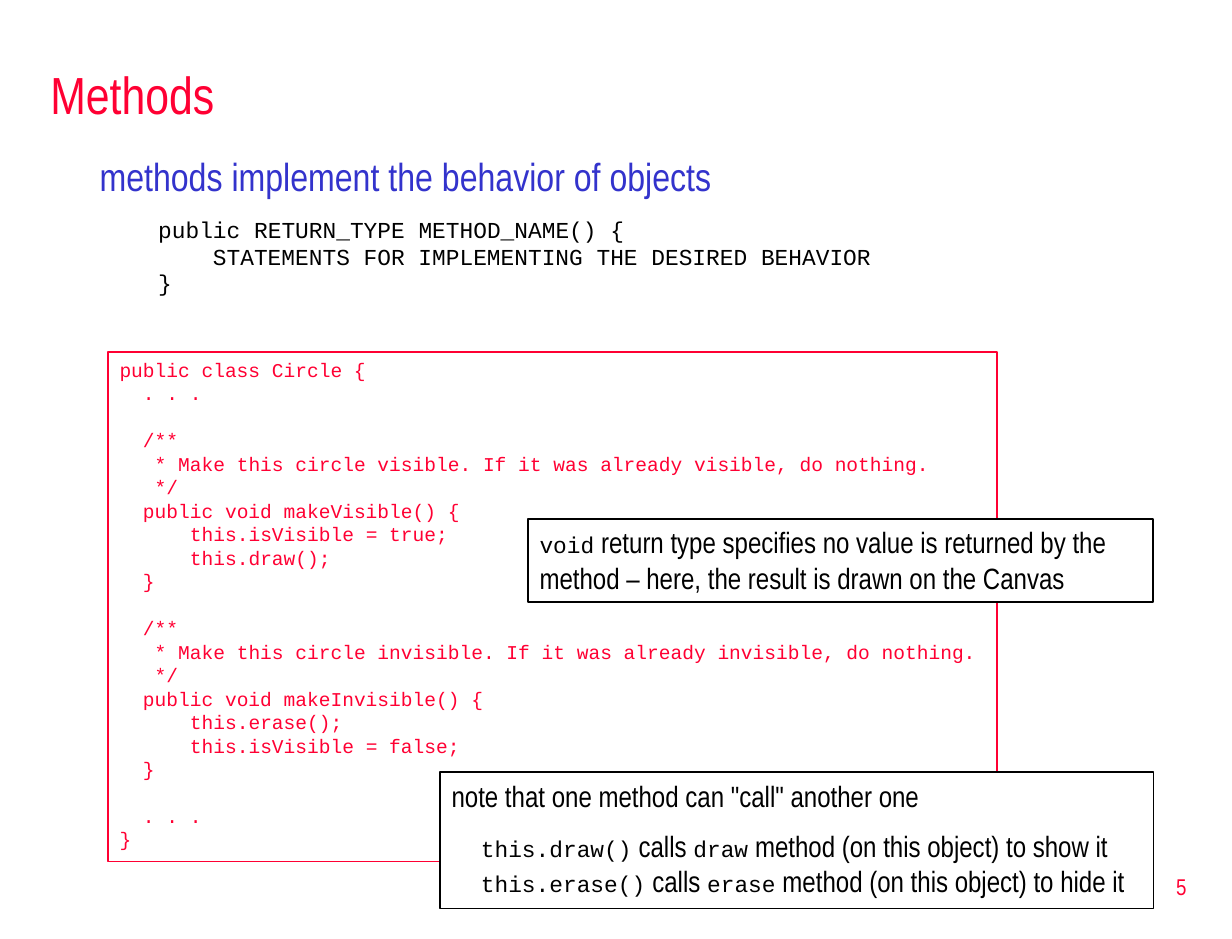
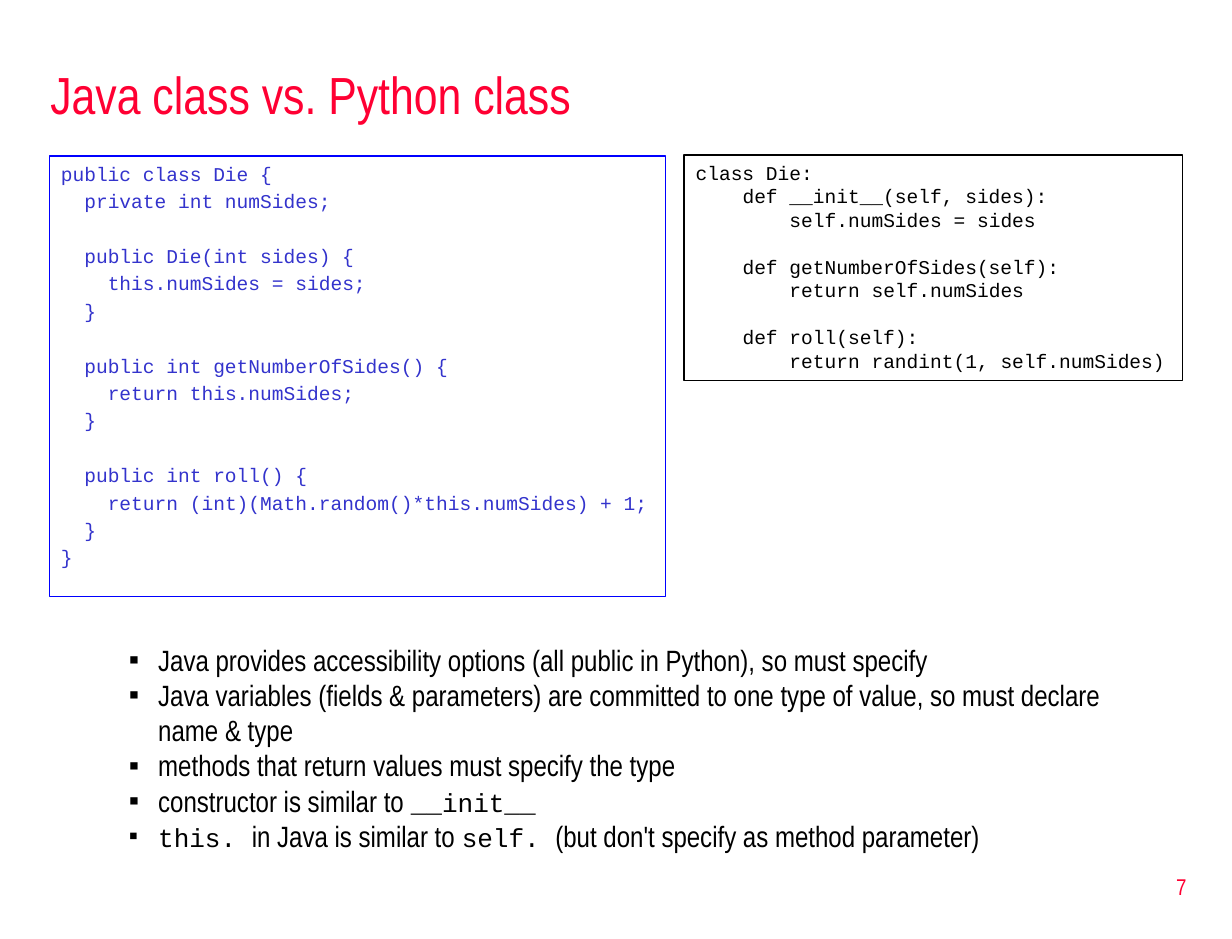
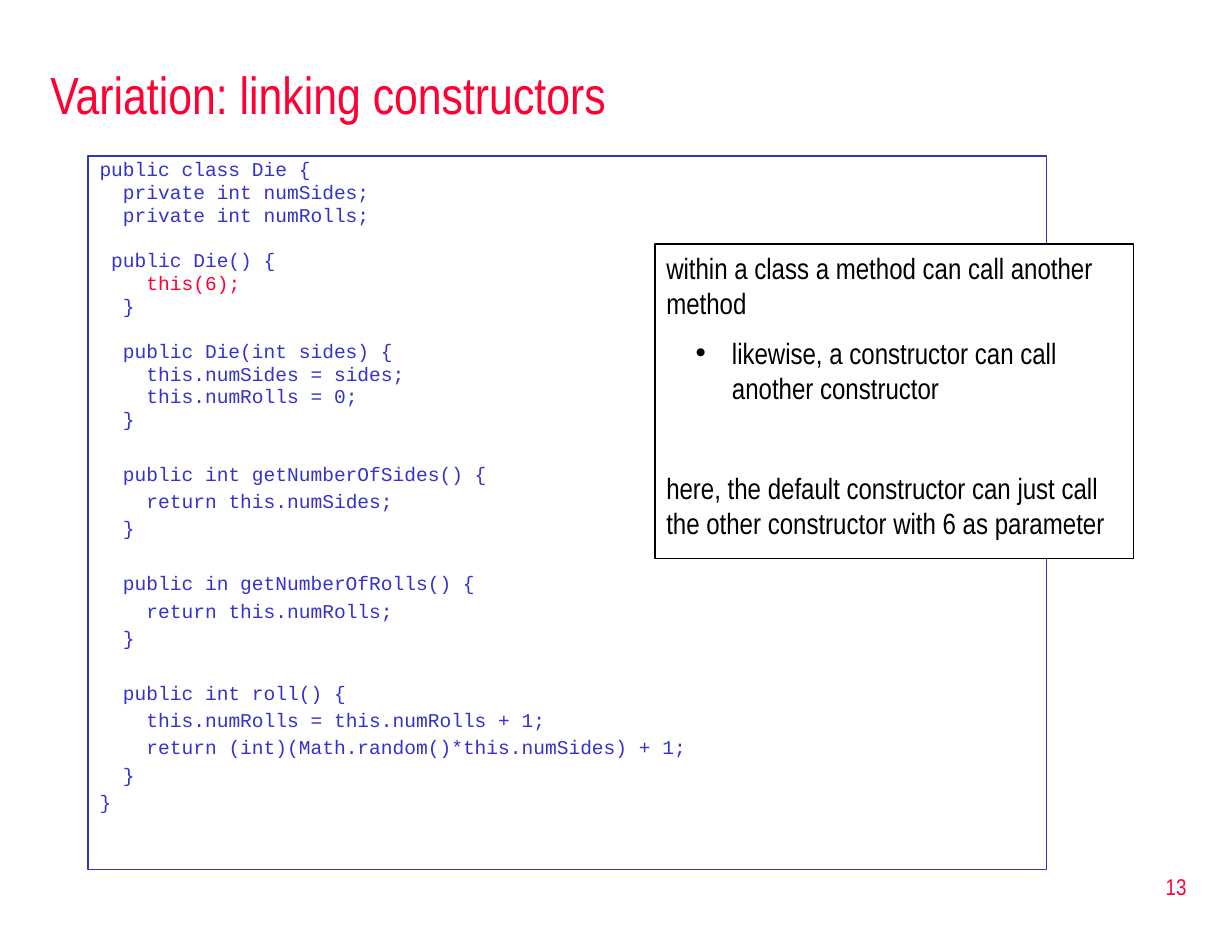
"""Build three slides on Java methods, classes and linked constructors."""
from dataclasses import dataclass, replace
from typing import Optional

from lxml.etree import SubElement as SubEl
from pptx import Presentation
from pptx.dml.color import RGBColor as Rgb
from pptx.enum.shapes import MSO_SHAPE as Kind
from pptx.enum.text import MSO_ANCHOR as Anchor, PP_ALIGN as Align
from pptx.oxml.ns import qn
from pptx.util import Inches, Pt

HUES = {"red": "FF0033", "navy": "3333CC", "blue": "0000FF",
        "black": "000000", "white": "FFFFFF"}
SANS, MONO = "Arial Narrow", "Courier New"
PITCH = 1.2


@dataclass
class Para:
    """A paragraph; backticks mark code words, lengths are inches, gaps points."""
    text: str
    size: float = 18
    font: str = SANS
    hue: str = "black"
    left: float = 0
    hang: float = 0
    gap: float = 0
    lead: float = 1
    dot: str = ""
    code: float = 14
    align: Optional[Align] = None


@dataclass
class Box:
    """A text block with an optional outline and fill."""
    x: float
    y: float
    w: float
    h: float
    paras: list[Para]
    line: str = ""
    width: float = 1
    fill: str = ""
    mid: bool = False


def listing(text: str, hue: str, size: float = 12, lead: float = 1,
            rise: float = 0, left: float = 0, hot: str = "") -> list[Para]:
    """Turn code into paragraphs, with its indents and empty lines as spacing."""
    paras, gap = [], 0.0
    for row in text.strip("\n").split("\n"):
        body = row.strip()
        if not body:
            gap += size * PITCH * lead + rise
            continue
        inset = (len(row) - len(row.lstrip())) * size / 120
        tone = "red" if body == hot else hue
        paras.append(Para(body, size, MONO, tone, left + inset,
                          gap=gap + rise, lead=lead))
        gap = 0.0
    return paras


def style(font, name: str, size: float, hue: str) -> None:
    """Set a font's face, size and colour."""
    font.name, font.size = name, Pt(size)
    font.color.rgb = Rgb.from_string(HUES[hue])


def write(par, item: Para) -> None:
    """Fill one paragraph."""
    par.alignment, par.line_spacing = item.align, item.lead
    par.space_before = Pt(round(item.gap, 2))
    props = par._p.get_or_add_pPr()
    props.set("marL", str(Inches(item.left)))
    props.set("indent", str(-Inches(item.hang)))
    if item.dot:
        SubEl(props, qn("a:buFont"), typeface="Arial")
        SubEl(props, qn("a:buChar"), char=item.dot)
    parts = item.text.split("`")
    if len(parts) == 1:
        style(par.font, item.font, item.size, item.hue)
    for i, part in enumerate(parts):
        if not part:
            continue
        run = par.add_run()
        run.text = part
        if i % 2:
            style(run.font, MONO, item.code, item.hue)
        elif len(parts) > 1:
            style(run.font, item.font, item.size, item.hue)


def draw(slide, box: Box) -> None:
    """Draw a box and its text."""
    place = [Inches(n) for n in (box.x, box.y, box.w, box.h)]
    if box.line:
        shape = slide.shapes.add_shape(Kind.RECTANGLE, *place)
        shape.shadow.inherit = False
        shape.line.color.rgb = Rgb.from_string(HUES[box.line])
        shape.line.width = Pt(box.width)
        if box.fill:
            shape.fill.solid()
            shape.fill.fore_color.rgb = Rgb.from_string(HUES[box.fill])
        else:
            shape.fill.background()
    else:
        shape = slide.shapes.add_textbox(*place)
    frame = shape.text_frame
    frame.word_wrap = True
    frame.vertical_anchor = Anchor.MIDDLE if box.mid else Anchor.TOP
    for i, item in enumerate(box.paras):
        par = frame.add_paragraph() if i else frame.paragraphs[0]
        write(par, replace(item, align=item.align or Align.LEFT))


def build(deck, title: str, page: int, boxes: list[Box]) -> None:
    """Add a slide with title, page number and boxes."""
    slide = deck.slides.add_slide(deck.slide_layouts[6])
    head = Box(0.33, 0.42, 9.92, 0.75, [Para(title, 32, hue="red")], mid=True)
    foot = Box(8.02, 7.29, 2.19, 0.53,
               [Para(str(page), 14, hue="red", align=Align.RIGHT)], mid=True)
    for box in (head, foot, *boxes):
        draw(slide, box)


FORM = """
public RETURN_TYPE METHOD_NAME() {
    STATEMENTS FOR IMPLEMENTING THE DESIRED BEHAVIOR
}
"""

CIRCLE = """
public class Circle {
  . . .

  /**
   * Make this circle visible. If it was already visible, do nothing.
   */
  public void makeVisible() {
      this.isVisible = true;
      this.draw();
  }

  /**
   * Make this circle invisible. If it was already invisible, do nothing.
   */
  public void makeInvisible() {
      this.erase();
      this.isVisible = false;
  }

  . . .
}
"""

JAVA = """
public class Die {
  private int numSides;

  public Die(int sides) {
    this.numSides = sides;
  }

  public int getNumberOfSides() {
    return this.numSides;
  }

  public int roll() {
    return (int)(Math.random()*this.numSides) + 1;
  }
}
"""

PYTHON = """
class Die:
    def __init__(self, sides):
        self.numSides = sides

    def getNumberOfSides(self):
        return self.numSides

    def roll(self):
        return randint(1, self.numSides)
"""

LINKED = """
public class Die {
  private int numSides;
  private int numRolls;

 public Die() {
    this(6);
  }

  public Die(int sides) {
    this.numSides = sides;
    this.numRolls = 0;
  }
"""

REST = """
  public int getNumberOfSides() {
    return this.numSides;
  }

  public in getNumberOfRolls() {
    return this.numRolls;
  }

  public int roll() {
    this.numRolls = this.numRolls + 1;
    return (int)(Math.random()*this.numSides) + 1;
  }
}
"""

POINTS = [
    "Java provides accessibility options (all public in Python), so must specify",
    "Java variables (fields & parameters) are committed to one type of value, "
    "so must declare name & type",
    "methods that return values must specify the type",
    "constructor is similar to `__init__`",
    "`this. `in Java is similar to `self. `(but don't specify as method parameter)",
]


def main() -> None:
    """Build and save the deck."""
    deck = Presentation()
    deck.slide_width, deck.slide_height = Inches(10.5), Inches(8)

    form = listing(FORM, "black", 14, 0.8, 2.8, 0.5)
    form[0].gap += 10.4
    intro = Para("methods implement the behavior of objects", 24, hue="navy")
    build(deck, "Methods", 5, [
        Box(0.75, 1.25, 9.52, 1.58, [intro, *form]),
        Box(0.92, 3, 7.58, 4.34, listing(CIRCLE, "red"), "red"),
        Box(4.5, 4.42, 5.33, 0.71, [
            Para("`void` return type specifies no value is returned by the "
                 "method – here, the result is drawn on the Canvas"),
        ], "black", fill="white"),
        Box(3.75, 6.58, 6.08, 1.16, [
            Para('note that one method can "call" another one'),
            Para("`this.draw()` calls `draw` method (on this object) to show it",
                 left=0.25, gap=9),
            Para("`this.erase()` calls `erase` method (on this object) to hide it",
                 left=0.25),
        ], "black", fill="white"),
    ])

    build(deck, "Java class vs. Python class", 7, [
        Box(0.42, 1.33, 5.25, 3.75, listing(JAVA, "navy", rise=2.4),
            "blue", 0.75),
        Box(5.83, 1.32, 4.25, 1.92, listing(PYTHON, "black"), "black", 0.75),
        Box(1, 5.42, 8.58, 1.92,
            [Para(text, left=0.25, hang=0.25, dot="▪", code=16)
             for text in POINTS]),
    ])

    rest = listing(REST, "navy", rise=2.4)
    rest[0].gap += 12 * PITCH + 2.4
    linked = listing(LINKED, "navy", lead=0.8, rise=2.4, hot="this(6);")
    build(deck, "Variation: linking constructors", 13, [
        Box(0.75, 1.33, 8.17, 6.08, linked + rest, "navy", 0.75),
        Box(5.58, 2.08, 4.08, 2.68, [
            Para("within a class a method can call another method"),
            Para("likewise, a constructor can call another constructor",
                 left=0.56, hang=0.31, gap=9, dot="•"),
            Para("here, the default constructor can just call the other "
                 "constructor with 6 as parameter", gap=39.6),
        ], "black", fill="white"),
    ])
    deck.save("out.pptx")


if __name__ == "__main__":
    main()
